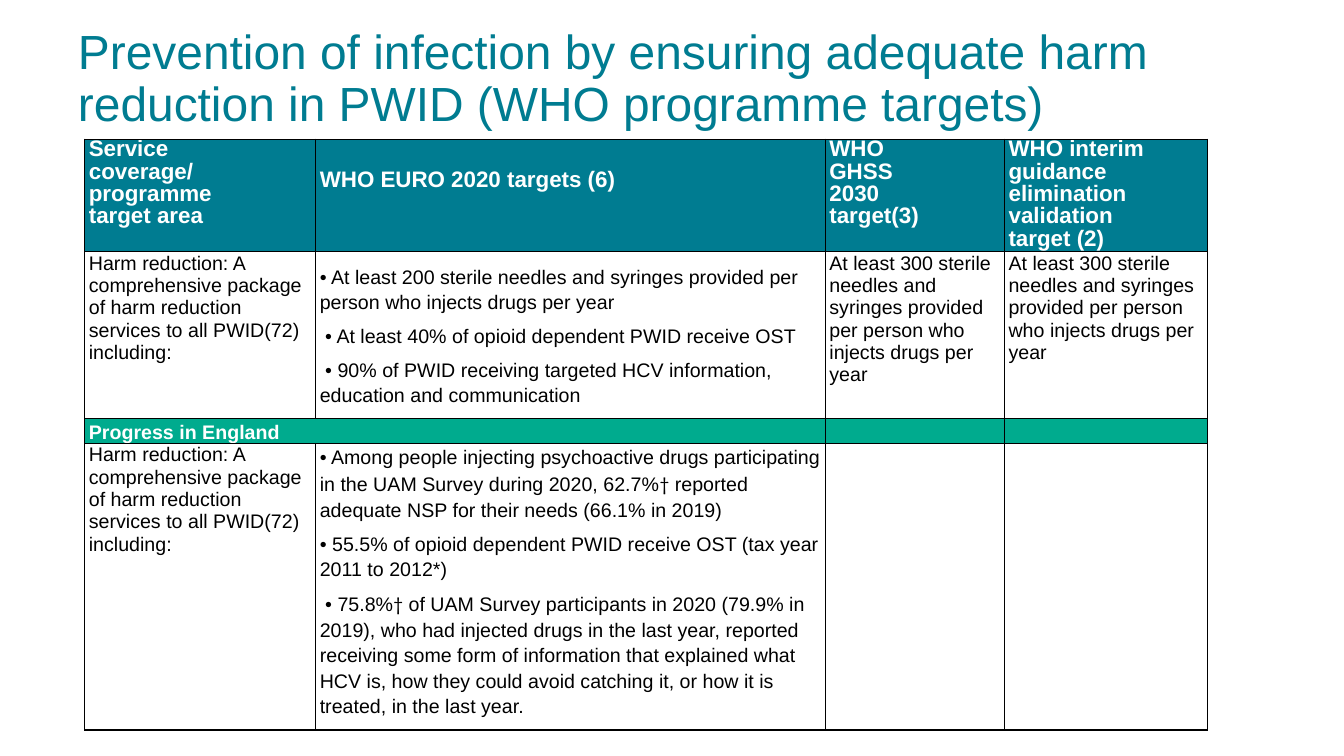
import pptx
import pptx.dml.color
import pptx.enum.text
import pptx.oxml
import pptx.oxml.ns
import pptx.util
from dataclasses import dataclass

Pt = pptx.util.Pt
ANCHOR = pptx.enum.text.MSO_ANCHOR
ALIGN = pptx.enum.text.PP_ALIGN


@dataclass(frozen=True)
class Theme:
    font: str = "Arial"
    symbol_font: str = "Calibri"
    teal: str = "007C91"
    green: str = "00AB8E"
    black: str = "000000"
    white: str = "FFFFFF"
    title_size: float = 34.2
    header_size: float = 16
    body_size: float = 14


THEME = Theme()
TIGHT = Pt(16)
LOOSE = 1.15
HEADER = {"size": THEME.header_size, "color": THEME.white, "bold": True}
BODY = {"size": THEME.body_size, "color": THEME.black, "bold": False}
BAND = {"size": THEME.body_size, "color": THEME.white, "bold": True}

TITLE = ("Prevention of infection by ensuring adequate harm reduction in PWID "
         "(WHO programme targets)")
COLUMN_WIDTHS = [165, 364, 128, 145]
ROW_HEIGHTS = [80.5, 118.8, 18, 204.7]
AREA = ("Harm reduction: A comprehensive package of harm reduction services "
        "to all PWID(72) including:")
NEEDLES = ("At least 300 sterile needles and syringes provided per person "
           "who injects drugs per year")
HEADINGS = [
    "Service coverage/ programme target area",
    "WHO EURO 2020 targets (6)",
    "WHO GHSS 2030 target(3)",
    "WHO interim guidance elimination validation target (2)",
]
TARGETS = [
    "• At least 200 sterile needles and syringes provided per person who "
    "injects drugs per year",
    " • At least 40% of opioid dependent PWID receive OST",
    " • 90% of PWID receiving targeted HCV information, education and "
    "communication",
]
PROGRESS = [
    "• Among people injecting psychoactive drugs participating in the UAM "
    "Survey during 2020, 62.7%† reported adequate NSP for their needs "
    "(66.1% in 2019)",
    "• 55.5% of opioid dependent PWID receive OST (tax year 2011 to 2012*)",
    " • 75.8%† of UAM Survey participants in 2020 (79.9% in 2019), who had "
    "injected drugs in the last year, reported receiving some form of "
    "information that explained what HCV is, how they could avoid catching "
    "it, or how it is treated, in the last year.",
]


def set_all(target, values):
    for name, value in values.items():
        setattr(target, name, value)


def rgb(color):
    return pptx.dml.color.RGBColor.from_string(color)


def add_span(para, text, size, color, bold):
    span = para.add_run()
    span.text = text
    name = THEME.symbol_font if text == "†" else THEME.font
    set_all(span.font, {"name": name, "size": Pt(size), "bold": bold})
    span.font.color.rgb = rgb(color)


def draw_borders(cell):
    """Black one-point edges; they precede the fill in the cell properties."""
    properties = cell._tc.get_or_add_tcPr()
    for index, side in enumerate(("lnL", "lnR", "lnT", "lnB")):
        properties.insert(index, pptx.oxml.parse_xml(
            f'<a:{side} {pptx.oxml.ns.nsdecls("a")} w="{Pt(1)}">'
            f'<a:solidFill><a:srgbClr val="{THEME.black}"/></a:solidFill>'
            f'</a:{side}>'))


def style_cell(cell, fill=None):
    set_all(cell, {"margin_left": Pt(3), "margin_right": Pt(3),
                   "margin_top": 0, "margin_bottom": 0})
    if fill:
        cell.fill.solid()
        cell.fill.fore_color.rgb = rgb(fill)
    else:
        cell.fill.background()
    draw_borders(cell)
    # Keeps an empty cell from stretching its row
    end = pptx.oxml.parse_xml(
        f'<a:endParaRPr {pptx.oxml.ns.nsdecls("a")} sz="{THEME.body_size * 100}"/>')
    cell.text_frame.paragraphs[0]._p.append(end)


def write_cell(cell, texts, spacing, style):
    frame = cell.text_frame
    for index, text in enumerate(texts):
        para = frame.add_paragraph() if index else frame.paragraphs[0]
        set_all(para, {"line_spacing": spacing,
                       "space_before": Pt(6 if index else 0)})
        for part in text.partition("†"):
            if part:
                add_span(para, part, **style)


def add_title(slide, left, top, width, height):
    box = slide.shapes.title
    set_all(box, {"left": Pt(left), "top": Pt(top),
                  "width": Pt(width), "height": Pt(height)})
    frame = box.text_frame
    set_all(frame, {"word_wrap": True, "vertical_anchor": ANCHOR.TOP,
                    "auto_size": pptx.enum.text.MSO_AUTO_SIZE.NONE,
                    "margin_left": Pt(7.2), "margin_right": Pt(7.2),
                    "margin_top": Pt(6), "margin_bottom": 0})
    para = frame.paragraphs[0]
    set_all(para, {"alignment": ALIGN.LEFT, "line_spacing": 0.9})
    add_span(para, TITLE, THEME.title_size, THEME.teal, False)


def add_targets_table(slide, left, top):
    table = slide.shapes.add_table(
        len(ROW_HEIGHTS), len(COLUMN_WIDTHS), Pt(left), Pt(top),
        Pt(sum(COLUMN_WIDTHS)), Pt(sum(ROW_HEIGHTS))).table
    set_all(table, {"first_row": False, "horz_banding": False})
    for column, width in zip(table.columns, COLUMN_WIDTHS):
        column.width = Pt(width)
    row_fills = [THEME.teal, None, THEME.green, None]
    for row, height, fill in zip(table.rows, ROW_HEIGHTS, row_fills):
        row.height = Pt(height)
        for cell in row.cells:
            style_cell(cell, fill)

    # Headings
    for index, heading in enumerate(HEADINGS):
        cell = table.cell(0, index)
        cell.margin_right = Pt(43)
        write_cell(cell, [heading], TIGHT, HEADER)
    table.cell(0, 1).margin_top = Pt(22)

    # Targets
    write_cell(table.cell(1, 0), [AREA], TIGHT, BODY)
    write_cell(table.cell(1, 1), TARGETS, LOOSE, BODY)
    table.cell(1, 1).vertical_anchor = ANCHOR.MIDDLE
    for index in (2, 3):
        write_cell(table.cell(1, index), [NEEDLES], TIGHT, BODY)

    # Progress
    table.cell(2, 0).merge(table.cell(2, 1))
    write_cell(table.cell(2, 0), ["Progress in England"], LOOSE, BAND)
    write_cell(table.cell(3, 0), [AREA], TIGHT, BODY)
    write_cell(table.cell(3, 1), PROGRESS, LOOSE, BODY)


def main():
    deck = pptx.Presentation()
    set_all(deck, {"slide_width": Pt(960), "slide_height": Pt(540)})
    slide = deck.slides.add_slide(deck.slide_layouts[5])
    add_title(slide, 48.5, 14.4, 876, 76.3)
    add_targets_table(slide, 60.5, 99.4)
    deck.save("out.pptx")


if __name__ == "__main__":
    main()
